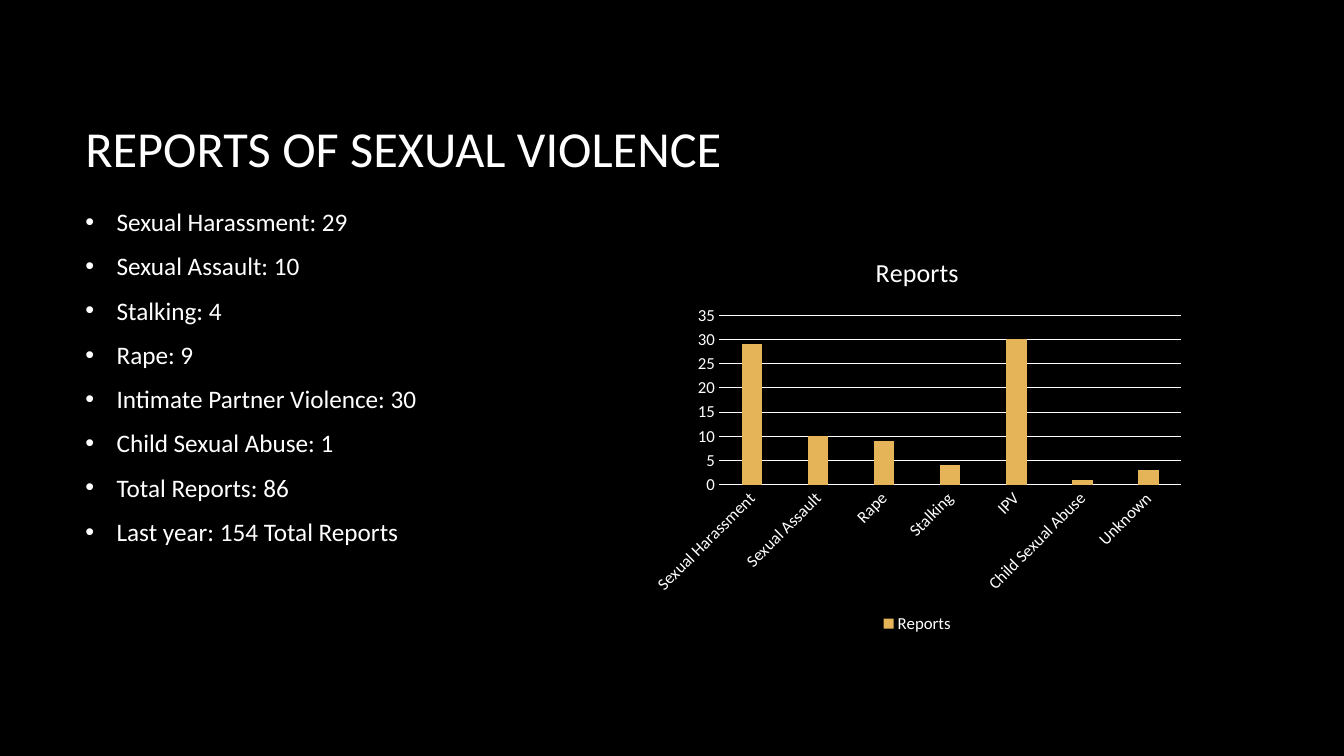
from dataclasses import dataclass

from lxml import etree
from pptx import Presentation
from pptx import util as u
from pptx.chart import data as chart_data
from pptx.dml.color import RGBColor
from pptx.enum import chart as chart_enum
from pptx.enum import text
from pptx.oxml import ns


@dataclass(frozen=True)
class Theme:
    font: str = "Calibri"
    background: RGBColor = RGBColor(0x00, 0x00, 0x00)
    foreground: RGBColor = RGBColor(0xFF, 0xFF, 0xFF)
    accent: RGBColor = RGBColor(0xE5, 0xB4, 0x58)
    title_size: float = 36
    body_size: float = 18
    chart_title_size: float = 18.6
    chart_size: float = 12
    paragraph_gap: float = 10
    line_width: float = 0.75


@dataclass(frozen=True)
class Box:
    left: float
    top: float
    width: float
    height: float

    def lengths(self) -> tuple:
        return tuple(u.Cm(v) for v in (self.left, self.top, self.width, self.height))


@dataclass(frozen=True)
class Report:
    label: str
    count: int


THEME = Theme()
TITLE_BOX = Box(1.9, 1.7, 28.14, 4.04)
LIST_BOX = Box(1.9, 5.08, 13.87, 11)
CHART_BOX = Box(16.18, 5.94, 13.87, 10.13)
BULLET_INDENT = u.Cm(0.79)

LIST_ITEMS = [
    "Sexual Harassment: 29",
    "Sexual Assault: 10",
    "Stalking: 4",
    "Rape: 9",
    "Intimate Partner Violence: 30",
    "Child Sexual Abuse: 1",
    "Total Reports: 86",
    "Last year: 154 Total Reports",
]
REPORTS = [
    Report("Sexual Harassment", 29),
    Report("Sexual Assault", 10),
    Report("Rape", 9),
    Report("Stalking", 4),
    Report("IPV", 30),
    Report("Child Sexual Abuse", 1),
    Report("Unknown", 3),
]


def style_font(font, size: float) -> None:
    font.name = THEME.font
    font.size = u.Pt(size)
    font.bold = False
    font.color.rgb = THEME.foreground


def style_line(line) -> None:
    line.color.rgb = THEME.foreground
    line.width = u.Pt(THEME.line_width)


def add_run(paragraph, content: str, size: float) -> None:
    run = paragraph.add_run()
    run.text = content
    style_font(run.font, size)


def add_text_frame(slide, box: Box, anchor):
    frame = slide.shapes.add_textbox(*box.lengths()).text_frame
    frame.word_wrap = True
    frame.vertical_anchor = anchor
    return frame


def add_bullet(paragraph) -> None:
    properties = paragraph._p.get_or_add_pPr()
    properties.set("marL", str(BULLET_INDENT))
    properties.set("indent", str(-BULLET_INDENT))
    color = etree.SubElement(properties, ns.qn("a:buClr"))
    etree.SubElement(color, ns.qn("a:srgbClr")).set("val", str(THEME.foreground))
    etree.SubElement(properties, ns.qn("a:buFont")).set("typeface", "Arial")
    etree.SubElement(properties, ns.qn("a:buChar")).set("char", "•")


def add_list(slide, items: list[str]) -> None:
    frame = add_text_frame(slide, LIST_BOX, text.MSO_ANCHOR.TOP)
    for index, item in enumerate(items):
        paragraph = frame.add_paragraph() if index else frame.paragraphs[0]
        add_bullet(paragraph)
        paragraph.space_after = u.Pt(THEME.paragraph_gap)
        add_run(paragraph, item, THEME.body_size)


def add_reports_chart(slide, reports: list[Report]) -> None:
    data = chart_data.CategoryChartData()
    data.categories = [report.label for report in reports]
    data.add_series("Reports", [report.count for report in reports])
    chart = slide.shapes.add_chart(
        chart_enum.XL_CHART_TYPE.COLUMN_CLUSTERED, *CHART_BOX.lengths(), data
    ).chart
    style_font(chart.font, THEME.chart_size)

    chart.has_title = True
    add_run(chart.chart_title.text_frame.paragraphs[0], "Reports", THEME.chart_title_size)
    chart.chart_title.include_in_layout = False

    chart.has_legend = True
    chart.legend.position = chart_enum.XL_LEGEND_POSITION.BOTTOM
    chart.legend.include_in_layout = False
    style_font(chart.legend.font, THEME.chart_size)

    for axis in (chart.category_axis, chart.value_axis):
        axis.major_tick_mark = chart_enum.XL_TICK_MARK.NONE
        axis.minor_tick_mark = chart_enum.XL_TICK_MARK.NONE
        style_font(axis.tick_labels.font, THEME.chart_size)
    style_line(chart.category_axis.format.line)
    label_body = chart.category_axis._element.find(ns.qn("c:txPr")).find(ns.qn("a:bodyPr"))
    label_body.set("rot", "-2700000")
    chart.value_axis.format.line.fill.background()
    chart.value_axis.minimum_scale = 0
    chart.value_axis.maximum_scale = 35
    chart.value_axis.major_unit = 5
    chart.value_axis.has_major_gridlines = True
    style_line(chart.value_axis.major_gridlines.format.line)

    plot = chart.plots[0]
    plot.gap_width = 219
    plot.overlap = -27
    plot.vary_by_categories = False
    fill = plot.series[0].format.fill
    fill.solid()
    fill.fore_color.rgb = THEME.accent


def main() -> None:
    presentation = Presentation()
    presentation.slide_width = u.Cm(33.87)
    presentation.slide_height = u.Cm(19.05)
    slide = presentation.slides.add_slide(presentation.slide_layouts[6])
    slide.background.fill.solid()
    slide.background.fill.fore_color.rgb = THEME.background

    title = add_text_frame(slide, TITLE_BOX, text.MSO_ANCHOR.MIDDLE)
    add_run(title.paragraphs[0], "REPORTS OF SEXUAL VIOLENCE", THEME.title_size)
    add_list(slide, LIST_ITEMS)
    add_reports_chart(slide, REPORTS)
    presentation.save("out.pptx")


if __name__ == "__main__":
    main()
